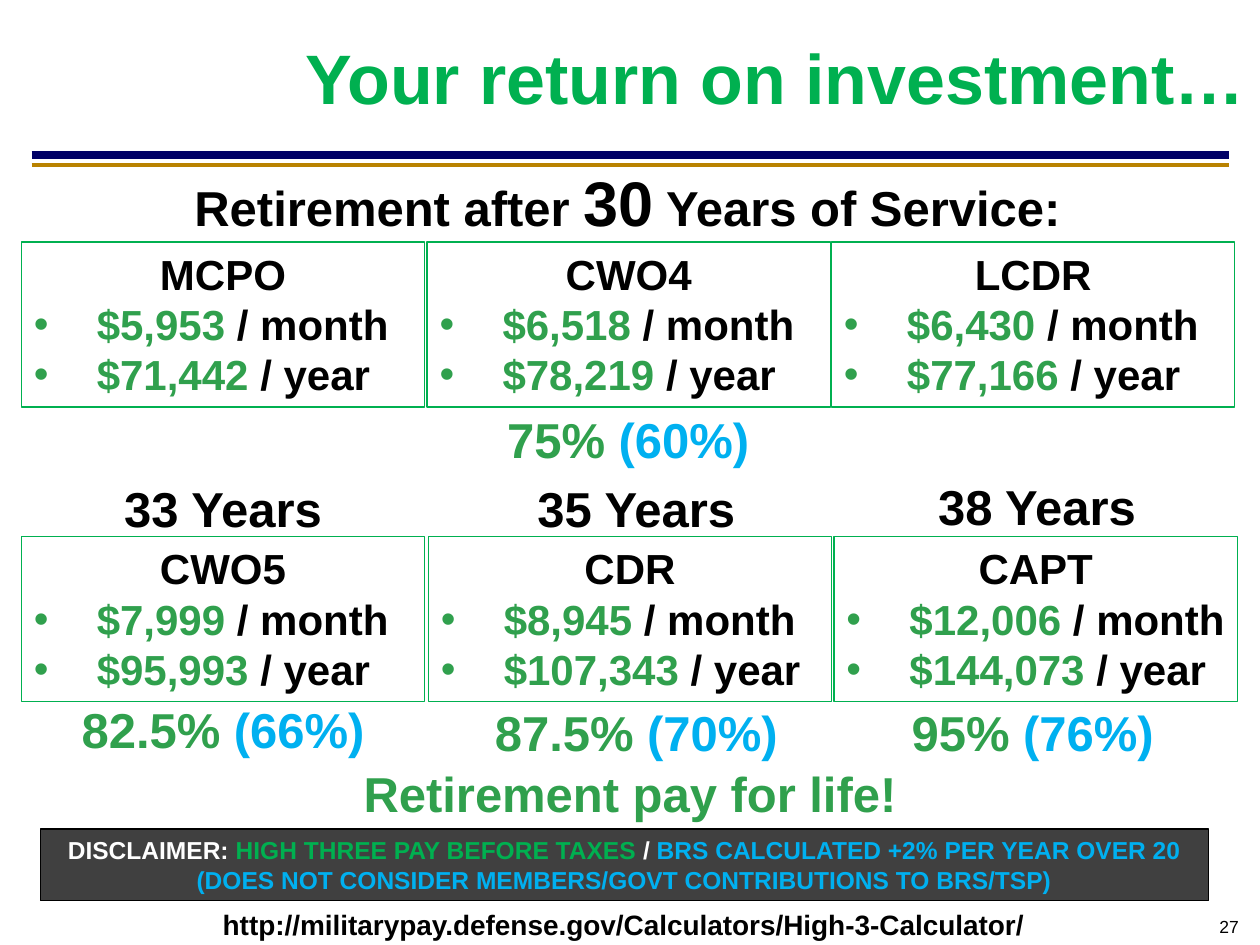
import pptx
import pptx.util
import pptx.dml.color
import pptx.enum.shapes
import pptx.enum.text
import pptx.oxml.ns
from lxml import etree

Inches, Pt = pptx.util.Inches, pptx.util.Pt
RGB = pptx.dml.color.RGBColor.from_string
qn = pptx.oxml.ns.qn
Align, Anchor, Auto = (pptx.enum.text.PP_ALIGN, pptx.enum.text.MSO_ANCHOR,
                       pptx.enum.text.MSO_AUTO_SIZE)
Rect = pptx.enum.shapes.MSO_SHAPE.RECTANGLE
Line = pptx.enum.shapes.MSO_CONNECTOR.STRAIGHT

COLORS = {"black": "000000", "white": "FFFFFF", "green": "00B050",
          "leaf": "30A04D", "blue": "00B0F0", "navy": "000066",
          "gold": "B98200", "gray": "404040"}

deck = pptx.Presentation()
deck.slide_width, deck.slide_height = Inches(10), Inches(7.5)
slide = deck.slides.add_slide(deck.slide_layouts[5])


def write(para, runs, size, align=Align.CENTER, bold=True, bullet=False):
    """Fill a paragraph with (text, color) or (text, color, size) runs."""
    para.alignment = align
    if bullet:
        props = para._p.get_or_add_pPr()
        props.set("marL", str(Inches(0.5)))
        props.set("indent", str(-Inches(0.5)))
        etree.SubElement(props, qn("a:buFont")).set("typeface", "Arial")
        etree.SubElement(props, qn("a:buChar")).set("char", "•")
    para.font.name, para.font.size, para.font.bold = "Arial", Pt(size), bold
    for text, color, *own in runs:
        run = para.add_run()
        run.text = text
        run.font.color.rgb = RGB(COLORS[color])
        if own:
            run.font.size = Pt(own[0])


def label(left, top, width, height, runs, size, wrap=True, **style):
    """Add a text box of one paragraph."""
    box = slide.shapes.add_textbox(Inches(left), Inches(top),
                                   Inches(width), Inches(height))
    box.text_frame.word_wrap = wrap
    write(box.text_frame.paragraphs[0], runs, size, **style)


# Double rule under the title
for y, color, weight in [(1.23, "navy", 4.5), (1.31, "gold", 2.75)]:
    rule = slide.shapes.add_connector(Line, Inches(0.25), Inches(y),
                                      Inches(9.75), Inches(y))
    rule.line.color.rgb = RGB(COLORS[color])
    rule.line.width = Pt(weight)
    etree.SubElement(rule._element.spPr, qn("a:effectLst"))

# Title
title = slide.shapes.title
title.left, title.top = Inches(0.98), Inches(0.22)
title.width, title.height = Inches(9), Inches(0.77)
frame = title.text_frame
frame.auto_size = Auto.NONE
frame.vertical_anchor = Anchor.BOTTOM
frame.paragraphs[0].line_spacing = 0.85
write(frame.paragraphs[0], [("Your return on investment…", "green")], 40,
      align=Align.RIGHT)

# Heading
label(0.98, 1.25, 8, 0.5, [("Retirement after ", "black"), ("30", "black", 36),
                           (" Years of Service:", "black")], 28)

# Pay boxes: left, top, rank, month, year
pay = [
    (0.17, 1.92, "MCPO", "$5,953", "$71,442"),
    (3.39, 1.92, "CWO4", "$6,518", "$78,219"),
    (6.60, 1.92, "LCDR", "$6,430", "$77,166"),
    (0.17, 4.26, "CWO5", "$7,999", "$95,993"),
    (3.40, 4.26, "CDR", "$8,945", "$107,343"),
    (6.62, 4.26, "CAPT", "$12,006", "$144,073"),
]
for left, top, rank, month, year in pay:
    box = slide.shapes.add_shape(Rect, Inches(left), Inches(top),
                                 Inches(3.2), Inches(1.31))
    box.shadow.inherit = False
    box.fill.background()
    box.line.color.rgb = RGB(COLORS["green"])
    box.line.width = Pt(0.75)
    frame = box.text_frame
    frame.word_wrap = True
    frame.vertical_anchor = Anchor.TOP
    write(frame.paragraphs[0], [(rank, "black")], 24)
    for sum_, unit in [(month, "/ month"), (year, "/ year")]:
        write(frame.add_paragraph(), [(sum_ + " ", "leaf"), (unit, "black")],
              24, align=Align.LEFT, bullet=True)

# Years of service above the lower boxes
for left, top, years in [(0.77, 3.75, 33), (4.05, 3.75, 35), (7.23, 3.73, 38)]:
    label(left, top, 2, 0.5, [(f"{years} Years", "black")], 28)

# Share of pay: high three, then blended
shares = [(3.91, 3.2, 2.15, "75%", "(60%)"), (0.53, 5.5, 2.48, "82.5%", "(66%)"),
          (3.81, 5.53, 2.48, "87.5%", "(70%)"), (7.12, 5.53, 2.15, "95%", "(76%)")]
for left, top, width, high, blend in shares:
    label(left, top, width, 0.57, [(high + " ", "leaf"), (blend, "blue")], 28,
          wrap=False)

label(2.76, 6.01, 4.48, 0.57, [("Retirement pay for life!", "leaf")], 28,
      wrap=False)

# Disclaimer
note = slide.shapes.add_shape(Rect, Inches(0.32), Inches(6.58),
                              Inches(9.27), Inches(0.57))
note.shadow.inherit = False
note.fill.solid()
note.fill.fore_color.rgb = RGB(COLORS["gray"])
note.line.color.rgb = RGB(COLORS["black"])
note.line.width = Pt(0.75)
note.text_frame.word_wrap = True
note.text_frame.vertical_anchor = Anchor.TOP
write(note.text_frame.paragraphs[0], [
    ("DISCLAIMER: ", "white"), ("HIGH THREE PAY BEFORE TAXES ", "green"),
    ("/ ", "white"),
    ("BRS CALCULATED +2% PER YEAR OVER 20 "
     "(DOES NOT CONSIDER MEMBERS/GOVT CONTRIBUTIONS TO BRS/TSP)", "blue")], 14)

# Source link and page number
label(0.27, 7.15, 9.36, 0.37, [
    ("http://militarypay.defense.gov/Calculators/High-3-Calculator/", "black")], 16)
label(9.2, 7.22, 0.73, 0.28, [("27", "black")], 10, align=Align.RIGHT, bold=False)

deck.save("out.pptx")
